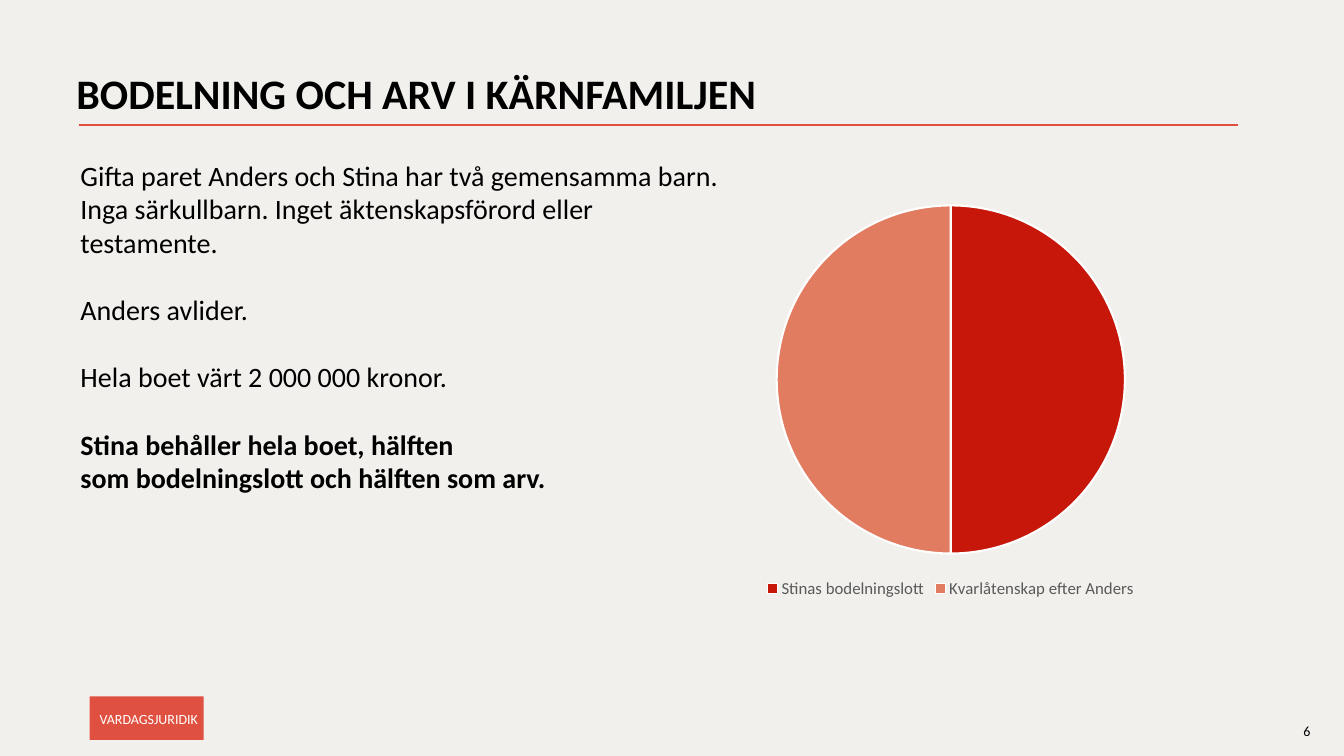
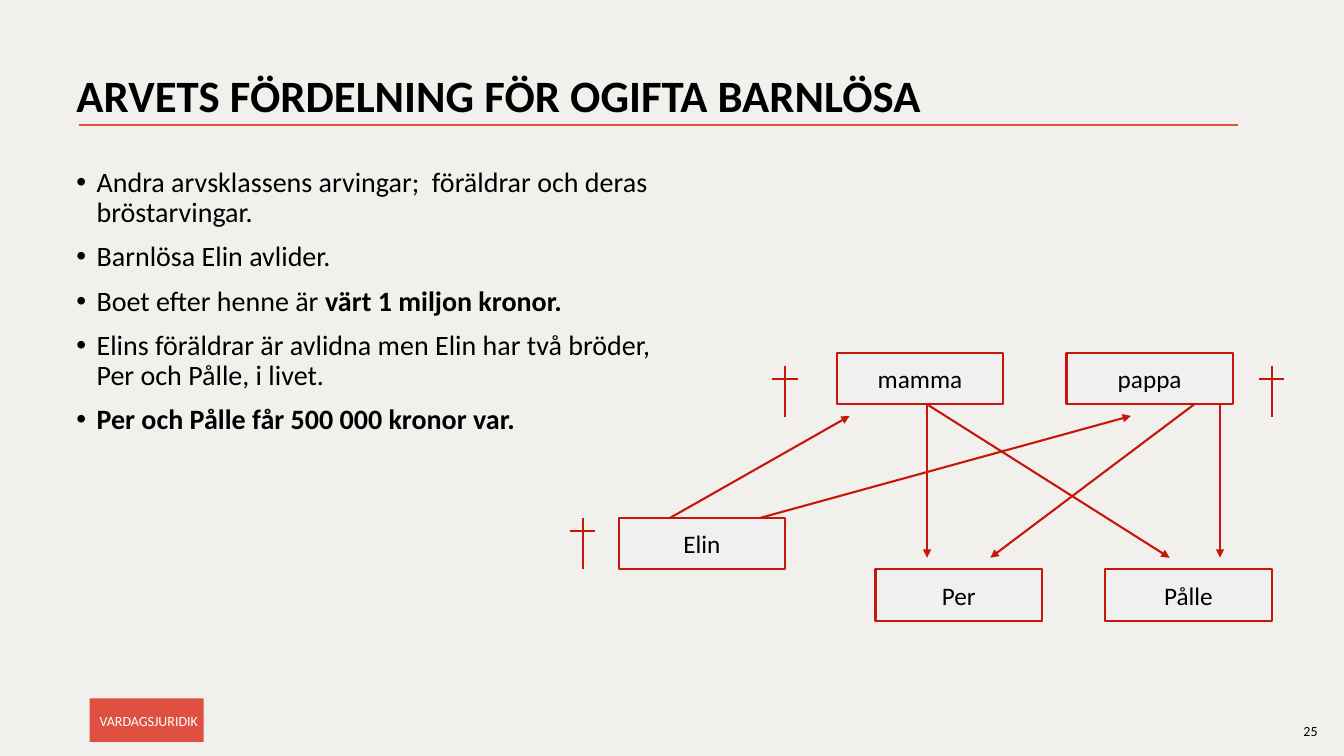
from dataclasses import dataclass

from lxml import etree
from pptx import Presentation
from pptx.chart.data import CategoryChartData
from pptx.dml.color import RGBColor
from pptx.enum.chart import XL_CHART_TYPE, XL_LEGEND_POSITION
from pptx.enum.shapes import MSO_CONNECTOR, MSO_SHAPE
from pptx.enum.text import MSO_ANCHOR, PP_ALIGN
from pptx.oxml.ns import qn
from pptx.util import Inches, Pt

PIE = XL_CHART_TYPE.PIE
LEGEND_BOTTOM = XL_LEGEND_POSITION.BOTTOM
STRAIGHT = MSO_CONNECTOR.STRAIGHT
RECT = MSO_SHAPE.RECTANGLE
TOP, MIDDLE = MSO_ANCHOR.TOP, MSO_ANCHOR.MIDDLE
LEFT, CENTER = PP_ALIGN.LEFT, PP_ALIGN.CENTER


@dataclass(frozen=True)
class Theme:
    """Colours, font and type sizes of the deck."""
    font: str = "Calibri"
    paper: str = "F1F0EC"
    ink: str = "000000"
    white: str = "FFFFFF"
    accent: str = "E05040"
    red: str = "C7170A"
    salmon: str = "E27C61"
    node: str = "F0F0F0"
    grey: str = "595959"
    body: int = 20
    label: int = 18
    legend: int = 12
    small: int = 10
    line: float = 1.5


T = Theme()
WIDTH, HEIGHT = 13.33, 7.5
TEXT_INSETS = (0.1, 0.05, 0.1, 0.05)
TAG_INSETS = (0.1, 0.08, 0.04, 0.05)
NODE_INSETS = (0.04,) * 4
COLS, ROWS = 55.4, 20.8
NODE_COLS, NODE_ROWS = 12.9, 4

NODES = [("mamma", 20.7, 0), ("pappa", 38.5, 0), ("Elin", 3.8, 12.8),
         ("Per", 23.7, 16.8), ("Pålle", 41.5, 16.8)]
ARROWS = [(7.8, 12.8, 21.7, 4.9), (14.8, 12.8, 43.5, 4.9),
          (27.7, 4, 27.7, 15.9), (27.7, 4, 46.5, 15.9),
          (50.4, 4, 50.4, 15.9), (48.4, 4, 32.6, 15.9)]
CROSSES = [(15.7, 1), (53.4, 1), (0, 12.8)]


def rgb(color):
    """Turn a hex string into a colour."""
    return RGBColor.from_string(color)


def set_font(font, size, color, bold=False):
    """Give a font the deck's typeface with a size and colour."""
    font.name, font.size, font.bold = T.font, Pt(size), bold
    font.color.rgb = rgb(color)


def add_bullet(p, indent):
    """Give a paragraph a hanging round bullet."""
    pPr = p._p.get_or_add_pPr()
    pPr.set("marL", str(Inches(indent)))
    pPr.set("indent", str(-Inches(indent)))
    etree.SubElement(pPr, qn("a:buFont")).set("typeface", "Arial")
    etree.SubElement(pPr, qn("a:buChar")).set("char", "•")


def write(sp, paragraphs, size=T.body, color=T.ink, align=LEFT, anchor=TOP,
          insets=TEXT_INSETS, wrap=True, spacing=1.0, gap=0, bullet=0):
    """Fill a shape with paragraphs, each a list of (text, bold) runs."""
    tf = sp.text_frame
    tf.word_wrap, tf.vertical_anchor = wrap, anchor
    (tf.margin_left, tf.margin_top,
     tf.margin_right, tf.margin_bottom) = map(Inches, insets)
    for i, runs in enumerate(paragraphs):
        p = tf.add_paragraph() if i else tf.paragraphs[0]
        p.alignment, p.line_spacing = align, spacing
        p.space_before = Pt(gap if i else 0)
        if bullet:
            add_bullet(p, bullet)
        for text, bold in runs:
            for n, row in enumerate(text.split("\n")):
                if n:
                    p.add_line_break()
                r = p.add_run()
                r.text = row
                set_font(r.font, size, color, bold)


def add_text(s, box, paragraphs, **fmt):
    """Place a text box."""
    write(s.shapes.add_textbox(*map(Inches, box)), paragraphs, **fmt)


def add_box(s, box, text, fill, line=None, **fmt):
    """Place a filled rectangle with one centred line of text."""
    sp = s.shapes.add_shape(RECT, *map(Inches, box))
    sp.shadow.inherit = False
    sp.fill.solid()
    sp.fill.fore_color.rgb = rgb(fill)
    if line:
        sp.line.color.rgb, sp.line.width = rgb(line), Pt(T.line)
    else:
        sp.line.fill.background()
    write(sp, [[(text, False)]], anchor=MIDDLE, wrap=False, **fmt)


def add_line(s, x1, y1, x2, y2, color, arrow=False):
    """Draw a straight line, with an arrowhead at its end if asked."""
    c = s.shapes.add_connector(STRAIGHT, *map(Inches, (x1, y1, x2, y2)))
    c.line.color.rgb, c.line.width = rgb(color), Pt(T.line)
    if arrow:
        ln = c.line._get_or_add_ln()
        etree.SubElement(ln, qn("a:tailEnd")).set("type", "triangle")
    etree.SubElement(c._element.spPr, qn("a:effectLst"))


def add_frame(prs, title, size, number, tag_top):
    """Start a slide with its title, rule, tag and page number."""
    s = prs.slides.add_slide(prs.slide_layouts[6])
    add_text(s, (0.66, 0.68, 11.5, 0.56), [[(title, True)]],
             size=size, spacing=0.9)
    add_line(s, 0.78, 1.24, 12.28, 1.24, T.accent)
    add_box(s, (0.89, tag_top, 1.13, 0.43), "VARDAGSJURIDIK", T.accent,
            size=T.small, color=T.white, insets=TAG_INSETS, spacing=0.9)
    add_text(s, (12.83, 7.12, 0.4, 0.27), [[(str(number), False)]],
             size=T.small)
    return s


def add_pie(s, box, slices):
    """Place a pie chart of (category, value, colour) slices."""
    data = CategoryChartData()
    data.categories = [name for name, _, _ in slices]
    data.add_series("Series 1", [value for _, value, _ in slices])
    chart = s.shapes.add_chart(PIE, *map(Inches, box), data).chart
    set_font(chart.font, T.small, T.ink)
    chart.has_title = False
    chart.has_legend = True
    chart.legend.position = LEGEND_BOTTOM
    chart.legend.include_in_layout = False
    set_font(chart.legend.font, T.legend, T.grey)
    plot = chart.plots[0]
    plot.vary_by_categories = True
    for i, (_, _, color) in enumerate(slices):
        fmt = plot.series[0].points[i].format
        fmt.fill.solid()
        fmt.fill.fore_color.rgb = rgb(color)
        fmt.line.color.rgb, fmt.line.width = rgb(T.white), Pt(T.line)


def add_family(s, box):
    """Draw the family diagram on a grid inside the box."""
    left, top, width, height = box
    cw, rh = width / COLS, height / ROWS

    def line(x1, y1, x2, y2, arrow=False):
        """Draw a line between two grid points."""
        add_line(s, left + x1 * cw, top + y1 * rh,
                 left + x2 * cw, top + y2 * rh, T.red, arrow)

    for name, col, row in NODES:
        add_box(s, (left + col * cw, top + row * rh,
                    NODE_COLS * cw, NODE_ROWS * rh), name, T.node, T.red,
                size=T.label, align=CENTER, insets=NODE_INSETS)
    for ends in ARROWS:
        line(*ends, arrow=True)
    for col, row in CROSSES:
        line(col + 1, row, col + 1, row + 4)
        line(col, row + 1, col + 2, row + 1)


def nuclear_family_slide(prs):
    """Build the slide on division of property in the nuclear family."""
    s = add_frame(prs, "BODELNING OCH ARV I KÄRNFAMILJEN", 30, 6, 6.91)
    add_text(s, (0.7, 1.52, 6.67, 3.47), [
        [("Gifta paret Anders och Stina har två gemensamma barn.\n"
          "Inga särkullbarn. Inget äktenskapsförord eller testamente.",
          False)],
        [("Anders avlider.", False)],
        [("Hela boet värt 2 000 000 kronor.", False)],
        [("Stina behåller hela boet, hälften\n"
          "som bodelningslott och hälften som arv.", True)],
    ], gap=24)
    add_pie(s, (6.79, 1.9, 5.28, 4.08), [
        ("Stinas bodelningslott", 50, T.red),
        ("Kvarlåtenskap efter Anders", 50, T.salmon)])


def childless_slide(prs):
    """Build the slide on inheritance after the unmarried and childless."""
    s = add_frame(prs, "ARVETS FÖRDELNING FÖR OGIFTA BARNLÖSA", 32, 25, 6.93)
    add_text(s, (0.66, 1.62, 6.18, 3), [
        [("Andra arvsklassens arvingar;  föräldrar och deras bröstarvingar.",
          False)],
        [("Barnlösa Elin avlider.", False)],
        [("Boet efter henne är ", False), ("värt 1 miljon kronor.", True)],
        [("Elins föräldrar är avlidna men Elin har två bröder, "
          "Per och Pålle, i livet.", False)],
        [("Per och Pålle får 500 000 kronor var.", True)],
    ], spacing=0.9, gap=10, bullet=0.2)
    add_family(s, (5.65, 3.5, 7.09, 2.66))


def main():
    """Build and save the deck."""
    prs = Presentation()
    prs.slide_width, prs.slide_height = Inches(WIDTH), Inches(HEIGHT)
    fill = prs.slide_master.background.fill
    fill.solid()
    fill.fore_color.rgb = rgb(T.paper)
    nuclear_family_slide(prs)
    childless_slide(prs)
    prs.save("out.pptx")


if __name__ == "__main__":
    main()
